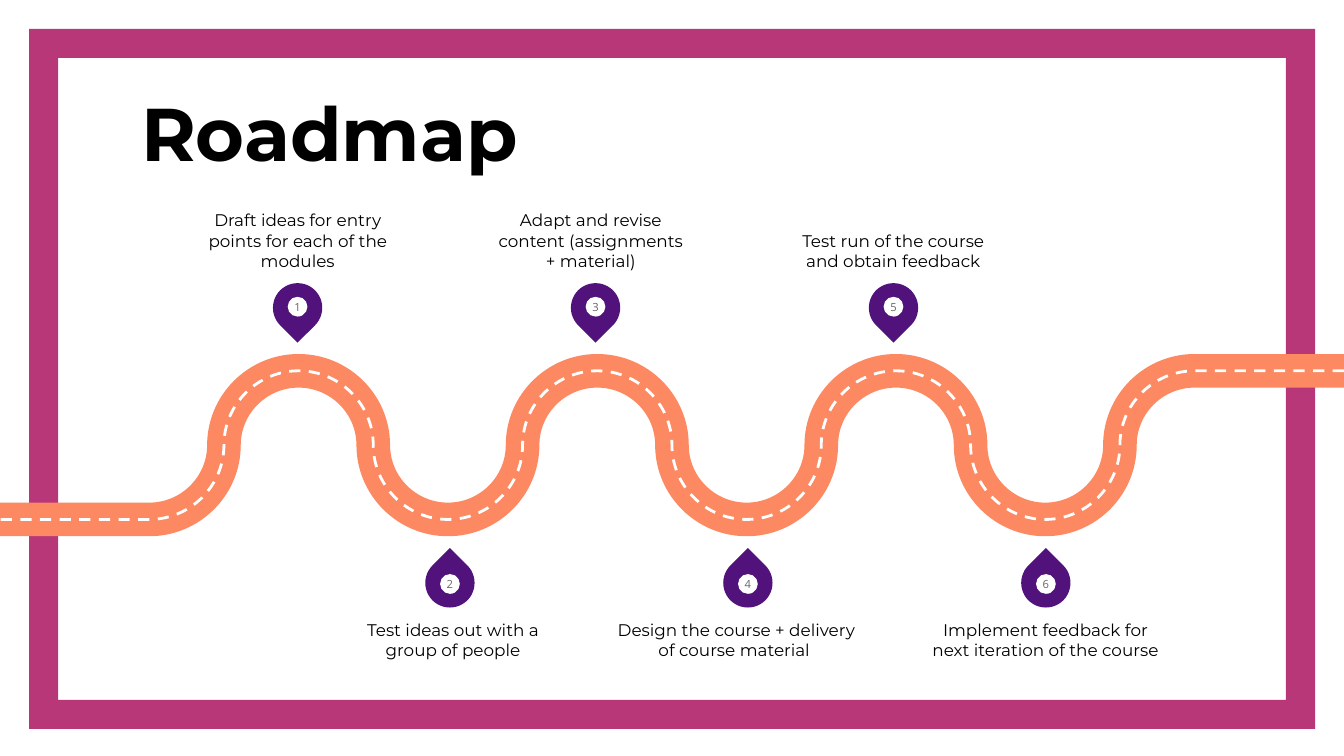
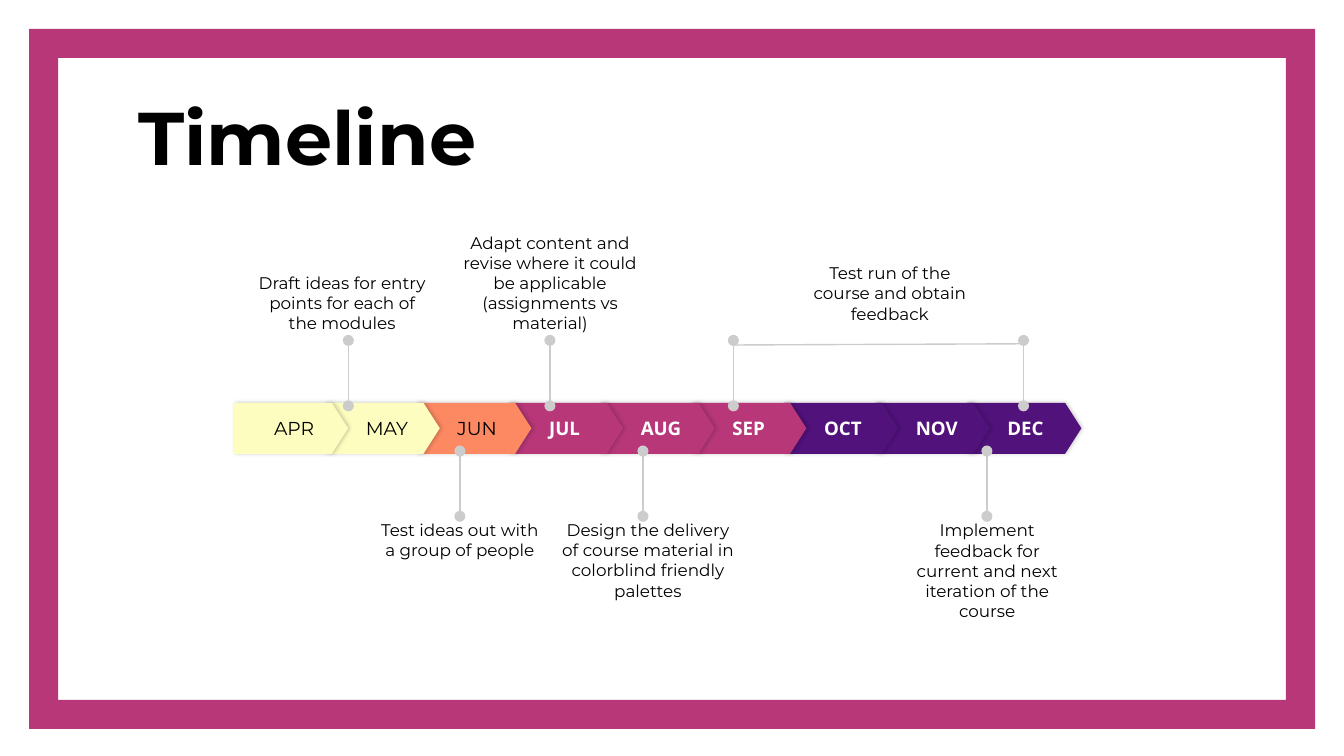
from dataclasses import dataclass
from math import cos, pi

from lxml import etree
from pptx import Presentation
from pptx.dml.color import RGBColor
from pptx.enum.dml import MSO_LINE
from pptx.enum.shapes import MSO_CONNECTOR, MSO_SHAPE
from pptx.enum.text import MSO_ANCHOR, MSO_AUTO_SIZE, PP_ALIGN
from pptx.oxml.ns import qn
from pptx.shapes.autoshape import Shape
from pptx.shapes.connector import Connector
from pptx.slide import Slide
from pptx.text.text import TextFrame
from pptx.util import Emu, Inches, Pt

BLACK = RGBColor(0x00, 0x00, 0x00)
WHITE = RGBColor(0xFF, 0xFF, 0xFF)
GREY = RGBColor(0x66, 0x66, 0x66)
SILVER = RGBColor(0xCC, 0xCC, 0xCC)
MAGENTA = RGBColor(0xB7, 0x37, 0x79)
ORANGE = RGBColor(0xFC, 0x89, 0x61)
PURPLE = RGBColor(0x51, 0x12, 0x7C)
CREAM = RGBColor(0xFC, 0xFD, 0xBF)

DISPLAY_FONT = "Montserrat"
LABEL_FONT = "Open Sans"

FRAME, ELLIPSE = MSO_SHAPE.FRAME, MSO_SHAPE.OVAL
TEARDROP, PENTAGON = MSO_SHAPE.TEAR, MSO_SHAPE.PENTAGON
STRAIGHT, DASH = MSO_CONNECTOR.STRAIGHT, MSO_LINE.DASH
TOP, MIDDLE, BOTTOM = MSO_ANCHOR.TOP, MSO_ANCHOR.MIDDLE, MSO_ANCHOR.BOTTOM
LEFT, CENTER = PP_ALIGN.LEFT, PP_ALIGN.CENTER

# The slide is a grid of 100 columns; rows are as tall as columns are wide.
SLIDE_WIDTH, SLIDE_HEIGHT = Inches(10), Inches(5.625)
CELL = SLIDE_WIDTH // 100
TITLE_ONLY = 5


@dataclass(frozen=True)
class Area:
    """A rectangle in grid cells."""
    left: float
    top: float
    width: float
    height: float

    def emu(self) -> tuple[Emu, Emu, Emu, Emu]:
        return cells(self.left), cells(self.top), cells(self.width), cells(self.height)


@dataclass(frozen=True)
class TextStyle:
    size: float
    color: RGBColor = BLACK
    font: str = DISPLAY_FONT
    bold: bool = False
    align: PP_ALIGN = CENTER


@dataclass(frozen=True)
class Step:
    text: str
    caption_left: float
    caption_width: float


@dataclass(frozen=True)
class Phase:
    months: tuple[str, ...]
    fill: RGBColor
    style: TextStyle


@dataclass(frozen=True)
class Note:
    text: str
    area: Area
    above: bool
    stems: tuple[float, ...]


TITLE_STYLE = TextStyle(40, bold=True, align=LEFT)
CAPTION_STYLE = TextStyle(9)
NUMBER_STYLE = TextStyle(6, GREY, LABEL_FONT)
DARK_MONTH = TextStyle(10, align=LEFT)
LIGHT_MONTH = TextStyle(10, WHITE, LABEL_FONT, True, LEFT)

FRAME_AREA = Area(2.16, 2.16, 95.68, 52.08)
FRAME_THICKNESS = 2.16

# Road: 18 lanes across, a quarter bend in each lane between the straight ends.
LANE = 100 / 18
FIRST_LANE, LAST_LANE = 16, 2
ROAD_MIDDLE, ROAD_RISE = 33.12, 5.53
CURVE_PULL = 0.55

PIN_SIZE, DISC_SIZE, DISC_SHIFT = 3.67, 1.47, 0.08
PIN_PITCH = 22.17
UPPER_PIN_START, LOWER_PIN_START = 22.14, 33.48
UPPER_PIN_MIDDLE, LOWER_PIN_MIDDLE = 22.9, 43.37
UPPER_CAPTION_TOP, LOWER_CAPTION_TOP, CAPTION_HEIGHT = 14.35, 46.1, 5.8

UPPER_STEPS = (
    Step("Draft ideas for entry points for each of the modules", 15.1, 14.1),
    Step("Adapt and revise content (assignments + material)", 36.9, 14.1),
    Step("Test run of the course and obtain feedback", 59.4, 14.1),
)
LOWER_STEPS = (
    Step("Test ideas out with a group of people", 25.6, 16.2),
    Step("Design the course + delivery of course material ", 45.73, 18.1),
    Step("Implement feedback for next iteration of the course", 68.73, 18.1),
)

MONTH_LEFT, MONTH_PITCH = 17.4, 6.82
MONTH_TOP, MONTH_WIDTH, MONTH_HEIGHT = 29.97, 8.5, 3.8
PHASES = (
    Phase(("APR", "MAY"), CREAM, DARK_MONTH),
    Phase(("JUN",), ORANGE, DARK_MONTH),
    Phase(("JUL", "AUG", "SEP"), MAGENTA, LIGHT_MONTH),
    Phase(("OCT", "NOV", "DEC"), PURPLE, LIGHT_MONTH),
)
UPPER_STEM_ENDS, LOWER_STEM_ENDS = (30.2, 25.33), (38.42, 33.56)
NOTES = (
    Note("Draft ideas for entry points for each of the modules",
         Area(19, 19.6, 12.9, 5.2), True, (25.92,)),
    Note("Adapt content and revise where it could be applicable (assignments vs material)",
         Area(34.47, 19.6, 12.9, 5.2), True, (40.92,)),
    Note("Test run of the course and obtain feedback",
         Area(59.75, 18.87, 12.9, 5.2), True, (54.57, 76.16)),
    Note("Test ideas out with a group of people",
         Area(28.36, 38.67, 11.7, 5.2), False, (34.22,)),
    Note("Design the delivery of course material in colorblind friendly palettes",
         Area(41.75, 38.67, 12.9, 5.2), False, (47.84,)),
    Note("Implement feedback for current and next iteration of the course",
         Area(68.1, 38.7, 10.7, 5.2), False, (73.43,)),
)


def cells(count: float) -> Emu:
    return Emu(round(count * CELL))


def write(frame: TextFrame, text: str, style: TextStyle, anchor: MSO_ANCHOR,
          inset: float = 0, left_inset: float | None = None) -> None:
    frame.text = text
    frame.word_wrap = True
    frame.auto_size = MSO_AUTO_SIZE.NONE
    frame.vertical_anchor = anchor
    frame.margin_top = frame.margin_right = frame.margin_bottom = cells(inset)
    frame.margin_left = cells(inset if left_inset is None else left_inset)
    for para in frame.paragraphs:
        para.alignment = style.align
        for span in para.runs:
            span.font.name = style.font
            span.font.size = Pt(style.size)
            span.font.bold = style.bold
            span.font.color.rgb = style.color


def add_filled(shapes, kind: MSO_SHAPE, area: Area, fill: RGBColor) -> Shape:
    """Add a preset shape with a plain fill, no outline and no shadow."""
    shape = shapes.add_shape(kind, *area.emu())
    shape.shadow.inherit = False
    shape.fill.solid()
    shape.fill.fore_color.rgb = fill
    shape.line.fill.background()
    return shape


def add_caption(page: Slide, text: str, area: Area, above: bool) -> None:
    box = page.shapes.add_textbox(*area.emu())
    write(box.text_frame, text, CAPTION_STYLE, BOTTOM if above else TOP)


def add_page(deck: Presentation, title: str, title_area: Area) -> Slide:
    page = deck.slides.add_slide(deck.slide_layouts[TITLE_ONLY])
    box = page.shapes.title
    box.left, box.top, box.width, box.height = title_area.emu()
    write(box.text_frame, title, TITLE_STYLE, BOTTOM, inset=1)
    return page


def add_master_frame(page: Slide) -> None:
    """Draw the border once and hand it to the slide master."""
    frame = add_filled(page.shapes, FRAME, FRAME_AREA, MAGENTA)
    frame.adjustments[0] = FRAME_THICKNESS / FRAME_AREA.height
    page.slide_layout.slide_master.shapes.element.insert(2, frame.element)


def bend_segments(road: Shape) -> None:
    """Turn the straight steps between the road's two ends into quarter bends."""
    steps = list(road.element.iter(qn("a:lnTo")))
    corners = [step[0] for step in steps[:-1]]
    for index, (start, end) in enumerate(zip(corners, corners[1:])):
        x0, y0, x1, y1 = (int(point.get(axis)) for point in (start, end) for axis in "xy")
        pull_x, pull_y = CURVE_PULL * (x1 - x0), CURVE_PULL * (y1 - y0)
        if index % 2 == 0:
            controls = (x0 + pull_x, y0), (x1, y1 - pull_y)
        else:
            controls = (x0, y0 + pull_y), (x1 - pull_x, y1)
        step = steps[index + 1]
        curve = etree.Element(qn("a:cubicBezTo"))
        for x, y in controls:
            etree.SubElement(curve, qn("a:pt"), x=str(round(x)), y=str(round(y)))
        step.getparent().replace(step, curve)
        curve.append(end)


def add_road_line(page: Slide, color: RGBColor, width: float,
                  dash: MSO_LINE | None = None) -> None:
    corners = [(cells(lane * LANE),
                cells(ROAD_MIDDLE - ROAD_RISE * cos(pi * (FIRST_LANE - lane) / 2)))
               for lane in range(FIRST_LANE, LAST_LANE - 1, -1)]
    builder = page.shapes.build_freeform(SLIDE_WIDTH, corners[0][1])
    builder.add_line_segments([*corners, (0, corners[-1][1])], close=False)
    road = builder.convert_to_shape()
    bend_segments(road)
    road.shadow.inherit = False
    road.fill.background()
    road.line.color.rgb = color
    road.line.width = Pt(width)
    road.line.dash_style = dash


def add_pin(page: Slide, number: int, center: float, above: bool) -> None:
    middle = UPPER_PIN_MIDDLE if above else LOWER_PIN_MIDDLE
    disc_middle = middle + (-DISC_SHIFT if above else DISC_SHIFT)
    pin = page.shapes.add_group_shape()
    drop = add_filled(pin.shapes, TEARDROP, Area(
        center - PIN_SIZE / 2, middle - PIN_SIZE / 2, PIN_SIZE, PIN_SIZE), PURPLE)
    drop.rotation = 135 if above else 315
    disc = add_filled(pin.shapes, ELLIPSE, Area(
        center - DISC_SIZE / 2, disc_middle - DISC_SIZE / 2, DISC_SIZE, DISC_SIZE), WHITE)
    write(disc.text_frame, str(number), NUMBER_STYLE, MIDDLE)


def add_soft_shadow(shape: Shape) -> None:
    effects = shape.element.spPr.find(qn("a:effectLst"))
    shadow = etree.SubElement(effects, qn("a:outerShdw"), blurRad=str(Pt(2.2)),
                              dist=str(Pt(0.8)), dir="0", rotWithShape="0")
    color = etree.SubElement(shadow, qn("a:srgbClr"), val=str(BLACK))
    etree.SubElement(color, qn("a:alpha"), val="20000")


def add_months(page: Slide) -> None:
    """Lay the months from last to first, so each point overlaps the next month."""
    months = [(month, phase) for phase in PHASES for month in phase.months]
    for index, (month, phase) in reversed(list(enumerate(months))):
        area = Area(MONTH_LEFT + index * MONTH_PITCH, MONTH_TOP, MONTH_WIDTH, MONTH_HEIGHT)
        arrow = add_filled(page.shapes, PENTAGON, area, phase.fill)
        arrow.adjustments[0] = 0.32
        add_soft_shadow(arrow)
        write(arrow.text_frame, month, phase.style, MIDDLE, left_inset=3)


def add_line(page: Slide, start: tuple[float, float], end: tuple[float, float]) -> Connector:
    line = page.shapes.add_connector(
        STRAIGHT, cells(start[0]), cells(start[1]), cells(end[0]), cells(end[1]))
    line.line.color.rgb = SILVER
    line.line.width = Pt(0.75)
    etree.SubElement(line.element.spPr, qn("a:effectLst"))
    return line


def add_stem(page: Slide, column: float, above: bool) -> None:
    """Add an upright line with a dot at both ends."""
    bottom, top = UPPER_STEM_ENDS if above else LOWER_STEM_ENDS
    stem = add_line(page, (column, bottom), (column, top))
    outline = stem.element.spPr.find(qn("a:ln"))
    for end in ("a:headEnd", "a:tailEnd"):
        etree.SubElement(outline, qn(end), type="oval")


def build_roadmap(deck: Presentation) -> None:
    page = add_page(deck, "Roadmap", Area(9.5, 7.53, 55.7, 6.6))
    add_master_frame(page)
    add_road_line(page, ORANGE, 18)
    add_road_line(page, WHITE, 1.5, DASH)
    for index in range(len(UPPER_STEPS)):
        add_pin(page, 2 * index + 1, UPPER_PIN_START + index * PIN_PITCH, above=True)
    for index in reversed(range(len(LOWER_STEPS))):
        add_pin(page, 2 * index + 2, LOWER_PIN_START + index * PIN_PITCH, above=False)
    for steps, top in ((UPPER_STEPS, UPPER_CAPTION_TOP), (LOWER_STEPS, LOWER_CAPTION_TOP)):
        for step in steps:
            area = Area(step.caption_left, top, step.caption_width, CAPTION_HEIGHT)
            add_caption(page, step.text, area, steps is UPPER_STEPS)


def build_timeline(deck: Presentation) -> None:
    page = add_page(deck, "Timeline", Area(9.3, 6.1, 30.5, 8.3))
    add_months(page)
    for note in NOTES:
        for column in note.stems:
            add_stem(page, column, note.above)
        add_caption(page, note.text, note.area, note.above)
    add_line(page, (76.4, 25.58), (54.57, 25.67))


def main() -> None:
    deck = Presentation()
    deck.slide_width, deck.slide_height = SLIDE_WIDTH, SLIDE_HEIGHT
    build_roadmap(deck)
    build_timeline(deck)
    deck.save("out.pptx")


if __name__ == "__main__":
    main()
